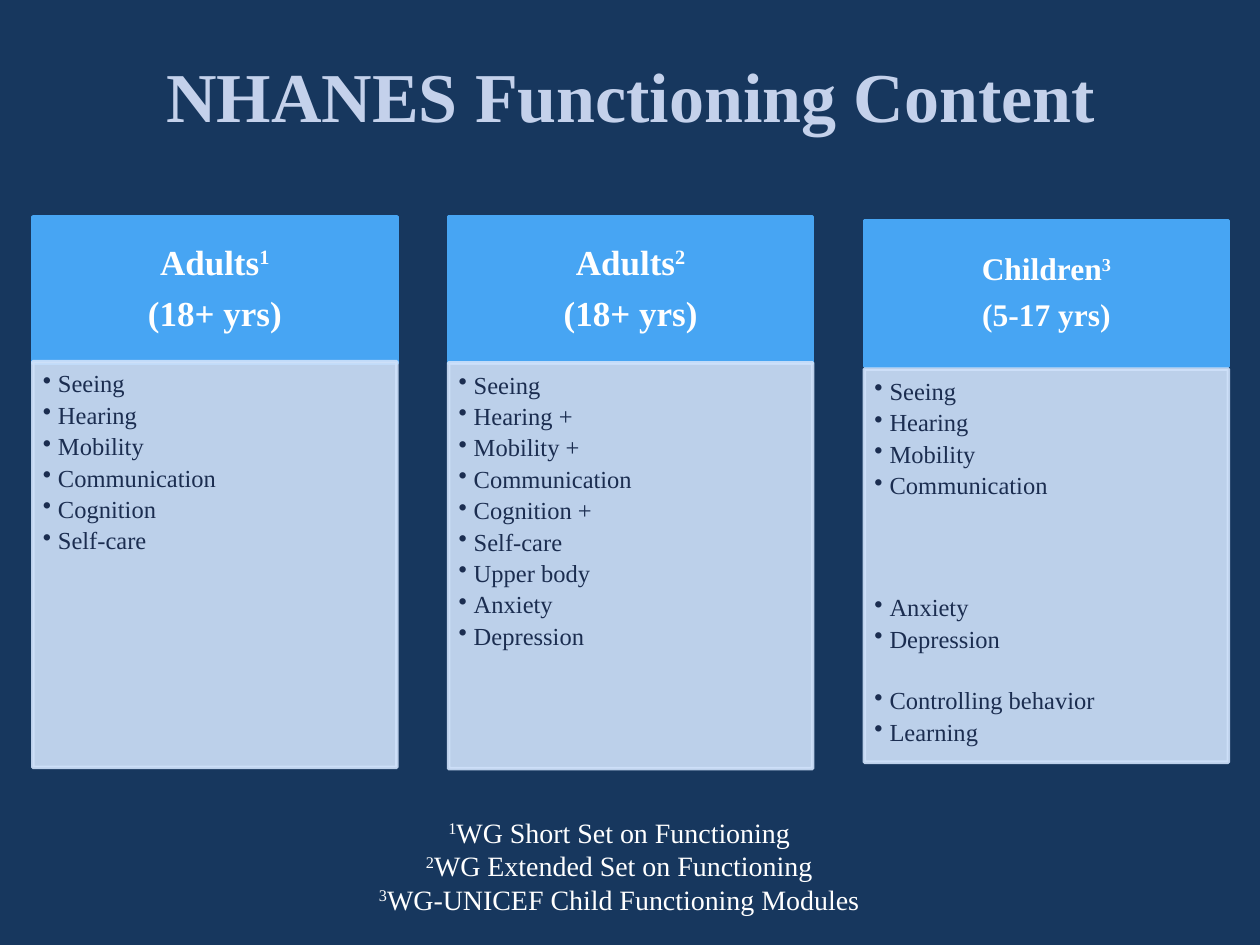
from pptx import Presentation, util as u
from pptx.dml.color import RGBColor
from pptx.enum import shapes, text
from pptx.oxml.ns import qn
from lxml import etree

TITLE = "NHANES Functioning Content"
COLS = [
    {"head": ("Adults", "1", "(18+ yrs)"), "size": 20, "top": 1.72, "body": (2.87, 3.22),
     "items": ["Seeing", "Hearing", "Mobility", "Communication", "Cognition", "Self-care"]},
    {"head": ("Adults", "2", "(18+ yrs)"), "size": 20, "top": 1.72, "body": (2.88, 3.22),
     "items": ["Seeing", "Hearing +", "Mobility +", "Communication", "Cognition +",
               "Self-care", "Upper body", "Anxiety", "Depression"]},
    {"head": ("Children", "3", "(5-17 yrs)"), "size": 18, "top": 1.75, "body": (2.93, 3.12),
     "items": ["Seeing", "Hearing", "Mobility", "Communication", "Anxiety", "Depression",
               "Controlling behavior", "Learning"],
     "skips": {"Anxiety": 3, "Controlling behavior": 1}},
]
NOTES = [("1", "WG Short Set on Functioning"),
         ("2", "WG Extended Set on Functioning"),
         ("3", "WG-UNICEF Child Functioning Modules")]
HUES = {"back": "17375E", "title": "C4D1EB", "head": "47A5F3",
        "body": "CFE1FA", "ink": "1B2D50", "white": "FFFFFF"}
LEFT, STEP, WIDE, HIGH = 0.26, 3.3, 2.89, 1.16
PITCH = 17.26
MID = text.PP_ALIGN.CENTER


def hue(name):
    return RGBColor.from_string(HUES[name])


def fit(frame, pads, anchor):
    sides = ("left", "top", "right", "bottom")
    form = {f"margin_{s}": u.Inches(p) for s, p in zip(sides, pads)}
    form |= {"word_wrap": True, "vertical_anchor": anchor}
    for key, val in form.items():
        setattr(frame, key, val)


def write(frame, rows, size, color, bold=False, **form):
    for i, row in enumerate(rows):
        para = frame.paragraphs[0] if i == 0 else frame.add_paragraph()
        for key, val in form.items():
            setattr(para, key, val)
        for words, raised in row:
            run = para.add_run()
            run.text = words
            look = {"name": "Times New Roman", "size": u.Pt(size), "bold": bold}
            for key, val in look.items():
                setattr(run.font, key, val)
            run.font.color.rgb = hue(color)
            if raised:
                run._r.get_or_add_rPr().set("baseline", "30000")


def block(slide, spot, color, alpha=None):
    box = slide.shapes.add_shape(shapes.MSO_SHAPE.RECTANGLE, *map(u.Inches, spot))
    box.shadow.inherit = False
    box.fill.solid()
    box.fill.fore_color.rgb = hue(color)
    box.line.color.rgb = hue(color)
    box.line.width = u.Pt(2)
    if alpha:
        for node in box._element.spPr.iter(qn("a:srgbClr")):
            etree.SubElement(node, qn("a:alpha")).set("val", str(alpha * 1000))
    return box.text_frame


def bullet(para):
    prop = para._p.get_or_add_pPr()
    prop.set("marL", str(u.Inches(0.12)))
    prop.set("indent", str(-u.Inches(0.12)))
    etree.SubElement(prop, qn("a:buChar")).set("char", "•")


def column(slide, i, col):
    left = LEFT + i * STEP
    name, mark, ages = col["head"]
    size = col["size"]
    head = block(slide, (left, col["top"], WIDE, HIGH), "head")
    fit(head, (0.15, 0.09, 0.15, 0.09), text.MSO_ANCHOR.MIDDLE)
    write(head, [[(name, False), (mark, True)], [(ages, False)]], size, "white", True,
          alignment=MID, line_spacing=0.9, space_after=u.Pt(size * 0.39))

    top, high = col["body"]
    body = block(slide, (left, top, WIDE, high), "body", 90)
    fit(body, (0.08, 0.08, 0.11, 0.12), text.MSO_ANCHOR.TOP)
    write(body, [[(item, False)] for item in col["items"]], 14, "ink",
          alignment=text.PP_ALIGN.LEFT, line_spacing=0.9, space_after=u.Pt(2.8))
    for para in body.paragraphs:
        lines = col.get("skips", {}).get(para.text, 0)
        if lines:
            para.space_before = u.Pt(lines * PITCH)
        bullet(para)


def main():
    deck = Presentation()
    deck.slide_width, deck.slide_height = u.Inches(10), u.Inches(7.5)
    slide = deck.slides.add_slide(deck.slide_layouts[5])
    slide.background.fill.solid()
    slide.background.fill.fore_color.rgb = hue("back")

    title = slide.shapes.title
    spot = {"left": 0.42, "top": 0.25, "width": 9.17, "height": 1}
    for key, val in spot.items():
        setattr(title, key, u.Inches(val))
    fit(title.text_frame, (0.1, 0.05, 0.1, 0.05), text.MSO_ANCHOR.MIDDLE)
    write(title.text_frame, [[(TITLE, False)]], 40, "title", True, alignment=MID)

    for i, col in enumerate(COLS):
        column(slide, i, col)

    notes = slide.shapes.add_textbox(*map(u.Inches, (0, 6.42, 9.83, 0.91))).text_frame
    fit(notes, (0.1, 0.05, 0.1, 0.05), text.MSO_ANCHOR.TOP)
    write(notes, [[(mark, True), (words, False)] for mark, words in NOTES],
          16, "white", alignment=MID)
    deck.save("out.pptx")


if __name__ == "__main__":
    main()
